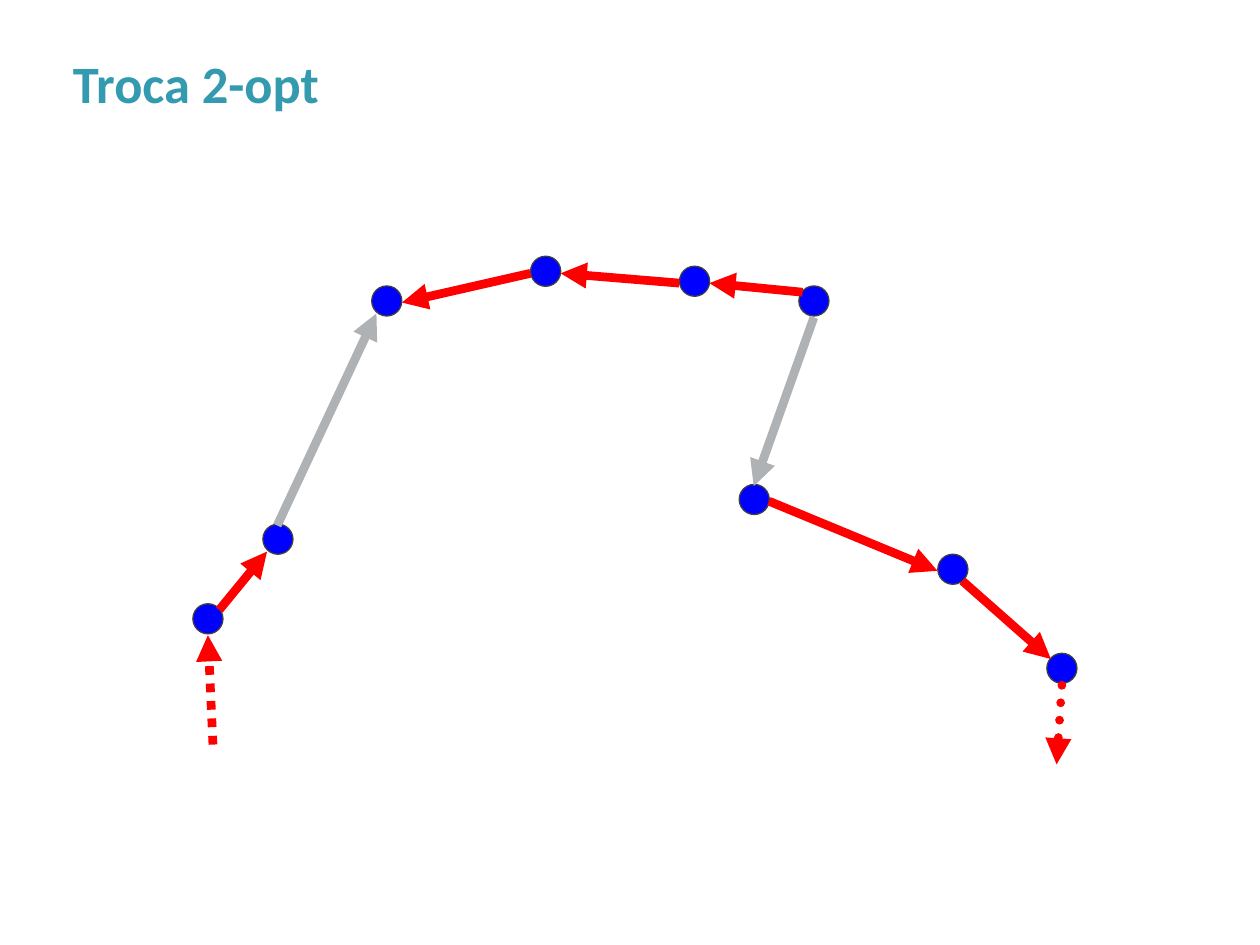
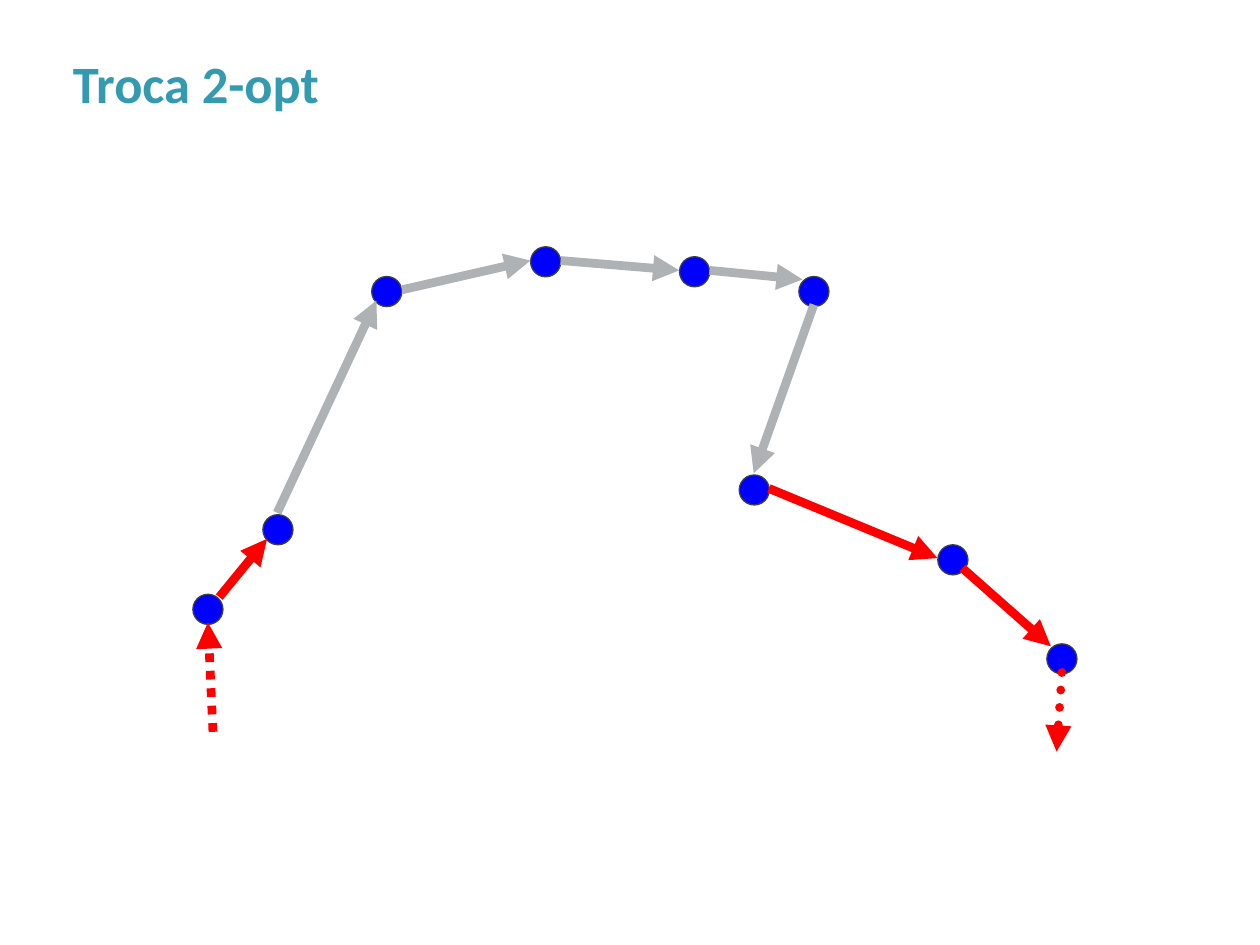
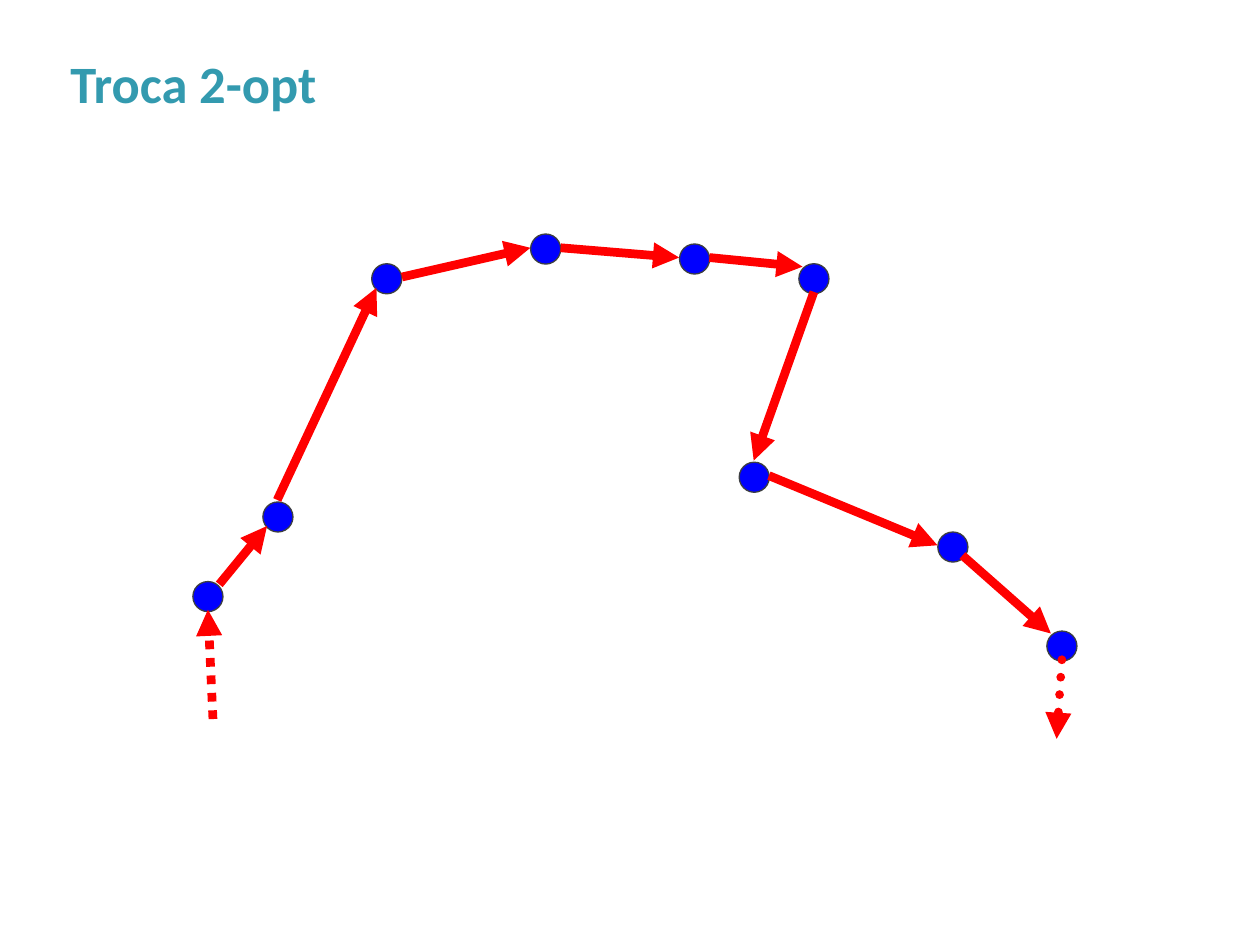
from lxml import etree
from pptx import Presentation
from pptx import util as u
from pptx.dml import color
from pptx.enum import dml, shapes, text
from pptx.oxml import ns

RED, GREY, BLUE, DARK, TEAL = "FF0000", "AFB2B4", "0000FF", "3D3F41", "339AAF"
NODE_SIZE = 17.2

nodes = [
    (456.5, 163.4), (110.2, 345), (212.4, 163.4), (303.2, 146.4), (388.3, 152.1),
    (150.2, 299.5), (422.4, 276.8), (535.9, 316.7), (598.2, 373.3),
]
edges = [
    ("path", 125.3, 348.5, 152.6, 315.2),
    ("middle", 458.6, 167, 405.4, 161.8),
    ("middle", 388.1, 161.8, 320.4, 156.2),
    ("middle", 303.1, 156.2, 229.7, 172.9),
    ("path", 439.4, 286.4, 535.7, 326.2),
    ("path", 550, 332, 600.5, 376.6),
    ("entry", 121.7, 425.5, 118.8, 363),
    ("exit", 606.8, 391.6, 603.8, 436.8),
    ("swapped", 158.4, 300.3, 215.1, 179.1),
    ("swapped", 465.1, 181.4, 430.7, 277.8),
]
steps = [
    {"title_left": 34.5, "node_shift": 0, "edge_shift": 0,
     "middle": RED, "swapped": GREY, "middle_arrow": "a:tailEnd"},
    {"title_left": 34.5, "node_shift": -5.4, "edge_shift": -7.3,
     "middle": GREY, "swapped": GREY, "middle_arrow": "a:headEnd"},
    {"title_left": 33, "node_shift": -12.7, "edge_shift": -14.6,
     "middle": RED, "swapped": RED, "middle_arrow": "a:headEnd"},
]


def rgb(value):
    return color.RGBColor.from_string(value)


deck = Presentation()
deck.slide_width, deck.slide_height = u.Pt(720), u.Pt(540)

for step in steps:
    page = deck.slides.add_slide(deck.slide_layouts[5])
    title = page.shapes.title
    title.left, title.top = u.Pt(step["title_left"]), u.Pt(21.6)
    title.width, title.height = u.Pt(651.6), u.Pt(55.4)
    title.text_frame.text = "Troca 2-opt"
    title.text_frame.vertical_anchor = text.MSO_ANCHOR.MIDDLE
    para = title.text_frame.paragraphs[0]
    para.alignment = text.PP_ALIGN.LEFT
    para.line_spacing = 0.9
    font = para.runs[0].font
    font.name, font.size, font.bold = "Calibri", u.Pt(30), True
    font.color.rgb = rgb(TEAL)

    for left, top in nodes:
        node = page.shapes.add_shape(
            shapes.MSO_SHAPE.OVAL, u.Pt(left), u.Pt(top + step["node_shift"]),
            u.Pt(NODE_SIZE), u.Pt(NODE_SIZE))
        node.shadow.inherit = False
        node.fill.solid()
        node.fill.fore_color.rgb = rgb(BLUE)
        node.line.color.rgb = rgb(DARK)
        node.line.width = u.Pt(0.75)

    for role, start_x, start_y, end_x, end_y in edges:
        shift = step["edge_shift"]
        edge = page.shapes.add_connector(
            shapes.MSO_CONNECTOR.STRAIGHT, u.Pt(start_x), u.Pt(start_y + shift),
            u.Pt(end_x), u.Pt(end_y + shift))
        edge.line.color.rgb = rgb(step.get(role, RED))
        edge.line.width = u.Pt(5)
        if role in ("entry", "exit"):
            edge.line.dash_style = dml.MSO_LINE.ROUND_DOT
        outline = edge.get_or_add_ln()
        if role == "exit":
            outline.set("cap", "rnd")
        arrow = step["middle_arrow"] if role == "middle" else "a:tailEnd"
        etree.SubElement(outline, ns.qn(arrow), type="triangle")
        etree.SubElement(edge._element.spPr, ns.qn("a:effectLst"))

deck.save("out.pptx")
